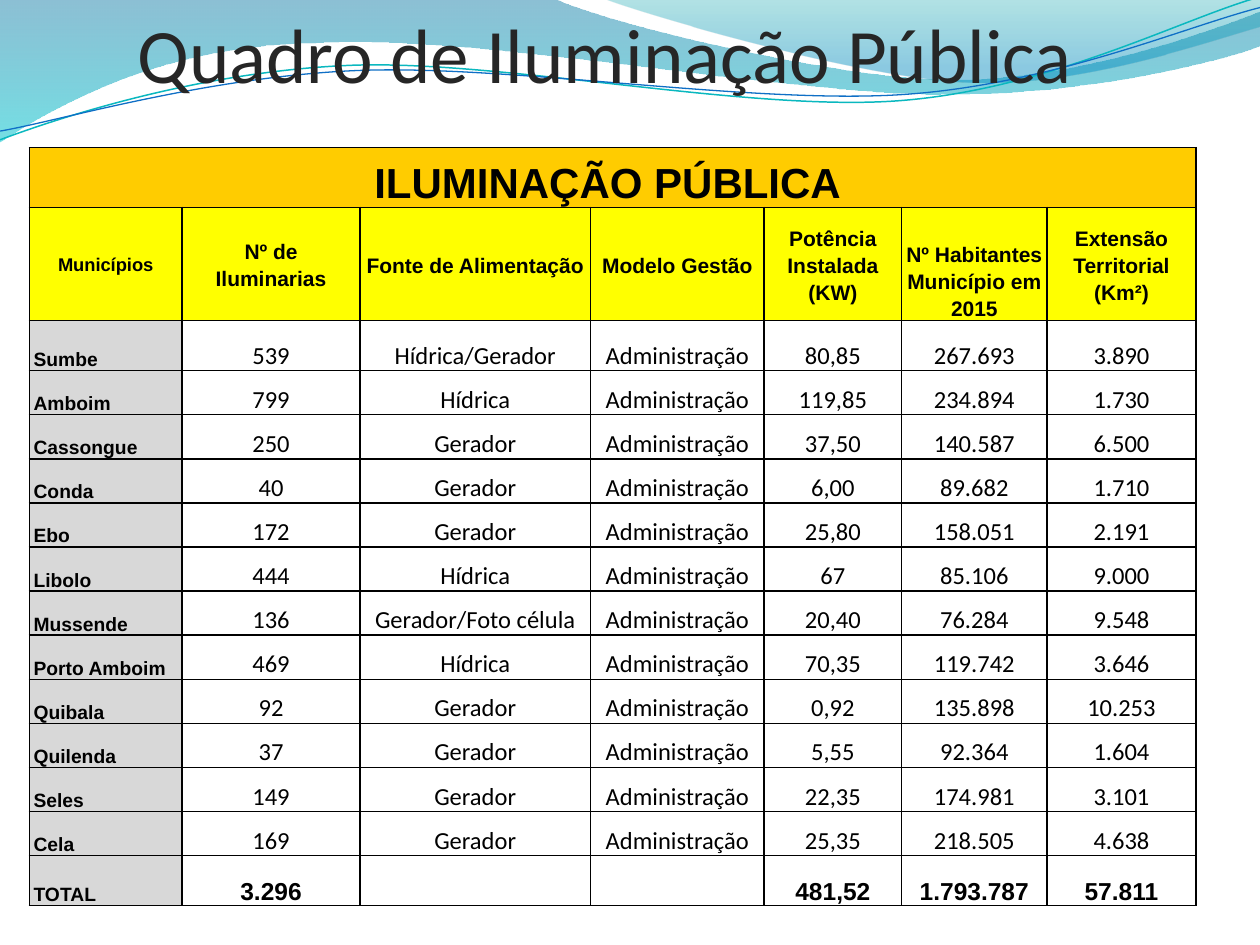
from pptx import Presentation
from pptx.dml.color import RGBColor
from pptx.enum.text import MSO_ANCHOR, MSO_AUTO_SIZE, PP_ALIGN
from pptx.oxml.ns import qn
from pptx.util import Pt
from lxml import etree

CENTER, LEFT = PP_ALIGN.CENTER, PP_ALIGN.LEFT
MIDDLE, BOTTOM = MSO_ANCHOR.MIDDLE, MSO_ANCHOR.BOTTOM

COLORS = {
    "title": "262626", "text": "000000", "border": "000000",
    "banner": "FFCC00", "header": "FFFF00", "name": "D8D8D8", "body": "FFFFFF",
    "blue": "0074A1", "cyan": "00C6CF", "teal": "00A1A9", "sky": "008BBF",
    "teal_line": "0AB8BF", "blue_line": "0F6FC6",
}

# Outlines in points: a pair is a straight step, six numbers are a Bézier curve
WIDE_WAVE = [
    (0, -0.7), (316.8, -0.7),
    (342.7, 12.2, 478.1, 45.4, 545.8, 45.4), (614.2, 45.4, 689.8, 18.7, 720, 6.5),
    (720.7, 25.9),
    (707.8, 31.7, 626.4, 54.7, 537.1, 54), (447.8, 54, 275, 20.2, 185, 24.5),
    (92.9, 25.2, 33.1, 59.8, -0.7, 81.4), (0, -0.7),
]
RIGHT_WAVE = [
    (344.9, -0.7),
    (366.5, 7.9, 491, 44.6, 553.7, 46.8), (616.3, 49.7, 691.9, 23, 720, 15.1),
    (720, 0), (344.9, -0.7),
]
TEAL_CURVE = [
    (0, 79.9),
    (34.6, 67, 113.8, 41, 199.4, 37.4), (284.4, 33.8, 427, 64.1, 513.4, 57.6),
    (599.8, 51.1, 675.4, 10.8, 718.6, -1.4),
]
BLUE_CURVE = [
    (0, 74.9),
    (33.8, 69.1, 118.1, 43.9, 203.8, 40.3), (290.2, 36.7, 429.8, 59.8, 516.2, 54),
    (601.9, 48.2, 677.5, 15.1, 720, 4.3),
]

COLUMN_WIDTHS = [87.3, 101.6, 131.8, 99.2, 78.6, 83.1, 85.1]
ROW_HEIGHTS = [34.1, 64.8, 28.5] + [25.2] * 11 + [28.6]
BANNER = "ILUMINAÇÃO PÚBLICA "
HEADERS = ["Municípios", "Nº de Iluminarias", "Fonte de Alimentação", "Modelo Gestão",
           "Potência Instalada (KW)", "Nº Habitantes Município em 2015",
           "Extensão Territorial (Km²)"]
MANAGEMENT = "Administração"
# Municipality, lamps, supply, power, inhabitants, area
MUNICIPALITIES = [
    ("Sumbe", "539", "Hídrica/Gerador", "80,85", "267.693", "3.890"),
    ("Amboim", "799", "Hídrica", "119,85", "234.894", "1.730"),
    ("Cassongue", "250", "Gerador", "37,50", "140.587", "6.500"),
    ("Conda", "40", "Gerador", "6,00", "89.682", "1.710"),
    ("Ebo", "172", "Gerador", "25,80", "158.051", "2.191"),
    ("Libolo", "444", "Hídrica", "67", "85.106", "9.000"),
    ("Mussende", "136", "Gerador/Foto célula", "20,40", "76.284", "9.548"),
    ("Porto Amboim", "469", "Hídrica", "70,35", "119.742", "3.646"),
    ("Quibala", "92", "Gerador", "0,92", "135.898", "10.253"),
    ("Quilenda", "37", "Gerador", "5,55", "92.364", "1.604"),
    ("Seles", "149", "Gerador", "22,35", "174.981", "3.101"),
    ("Cela", "169", "Gerador", "25,35", "218.505", "4.638"),
]
TOTALS = ["TOTAL", "3.296", "", "", "481,52", "1.793.787", "57.811"]


def rgb(name):
    return RGBColor.from_string(COLORS[name])


def add_outline(slide, outline, close):
    """Build the outline from its end points, then bend the curved steps."""
    points = [(Pt(step[-2]), Pt(step[-1])) for step in outline]
    builder = slide.shapes.build_freeform(*points[0])
    builder.add_line_segments(points[1:], close=close)
    shape = builder.convert_to_shape()
    shape.shadow.inherit = False
    segments = list(shape._element.spPr.iter(qn("a:lnTo")))
    for segment, step in zip(segments, outline[1:]):
        if len(step) == 6:
            segment.tag = qn("a:cubicBezTo")
            for index, (x, y) in enumerate((step[:2], step[2:4])):
                point = etree.Element(qn("a:pt"), x=str(Pt(x) - shape.left),
                                      y=str(Pt(y) - shape.top))
                segment.insert(index, point)
    return shape


def add_wave(slide, outline, stops):
    """Add a see-through wave; each stop is colour, position and opacity in percent."""
    shape = add_outline(slide, outline, True)
    shape.line.fill.background()
    shape.fill.gradient()
    shape.fill.gradient_angle = 270
    for stop, (color, position, _) in zip(shape.fill.gradient_stops, stops):
        stop.color.rgb = rgb(color)
        stop.position = position / 100
    fills = shape._element.spPr.iter(qn("a:srgbClr"))
    for element, (_, _, opacity) in zip(list(fills), stops):
        etree.SubElement(element, qn("a:alpha")).set("val", str(opacity * 1000))


def add_curve(slide, outline, color, width):
    shape = add_outline(slide, outline, False)
    shape.fill.background()
    shape.line.color.rgb = rgb(color)
    shape.line.width = Pt(width)


def add_run(paragraph, text, font, size, color, bold=False):
    run = paragraph.add_run()
    run.text = text
    run.font.name = font
    run.font.size = Pt(size)
    run.font.bold = bold
    run.font.color.rgb = rgb(color)


def add_title(slide, text):
    box = slide.shapes.add_textbox(Pt(0), Pt(0), Pt(691.9), Pt(60.5))
    frame = box.text_frame
    frame.word_wrap = True
    frame.auto_size = MSO_AUTO_SIZE.SHAPE_TO_FIT_TEXT
    frame.vertical_anchor = MIDDLE
    paragraph = frame.paragraphs[0]
    paragraph.alignment = CENTER
    add_run(paragraph, text, "Calibri", 44, "title")


def add_borders(cell):
    properties = cell._tc.get_or_add_tcPr()
    for side in ("lnL", "lnR", "lnT", "lnB"):
        line = etree.SubElement(properties, qn("a:" + side), w=str(Pt(1)))
        fill = etree.SubElement(line, qn("a:solidFill"))
        etree.SubElement(fill, qn("a:srgbClr"), val=COLORS["border"])


def fill_cell(cell, text, fill, size, font="Arial", bold=True, align=CENTER, anchor=BOTTOM):
    add_borders(cell)
    cell.fill.solid()
    cell.fill.fore_color.rgb = rgb(fill)
    cell.margin_left = cell.margin_right = Pt(2.4)
    cell.margin_top = cell.margin_bottom = Pt(0)
    cell.vertical_anchor = anchor
    if text:
        paragraph = cell.text_frame.paragraphs[0]
        paragraph.alignment = align
        paragraph.line_spacing = 1.15
        add_run(paragraph, text, font, size, "text", bold)


def add_lighting_table(slide):
    table = slide.shapes.add_table(
        len(ROW_HEIGHTS), len(COLUMN_WIDTHS), Pt(16.8), Pt(84.4),
        Pt(sum(COLUMN_WIDTHS)), Pt(sum(ROW_HEIGHTS))).table
    table.first_row = table.horz_banding = False
    for column, width in zip(table.columns, COLUMN_WIDTHS):
        column.width = Pt(width)
    for row, height in zip(table.rows, ROW_HEIGHTS):
        row.height = Pt(height)

    # Banner across all columns
    last_column = len(COLUMN_WIDTHS) - 1
    table.cell(0, 0).merge(table.cell(0, last_column))
    for column in range(last_column + 1):
        fill_cell(table.cell(0, column), "" if column else BANNER, "banner", 24)

    # Column headings
    for column, text in enumerate(HEADERS):
        fill_cell(table.cell(1, column), text, "header", 12 if column else 10.5,
                  anchor=BOTTOM if column == 5 else MIDDLE)

    # Municipalities and totals
    rows = [[*record[:3], MANAGEMENT, *record[3:]] for record in MUNICIPALITIES] + [TOTALS]
    for index, values in enumerate(rows, start=2):
        is_total = values is TOTALS
        fill_cell(table.cell(index, 0), values[0], "name", 11, align=LEFT)
        for column, text in enumerate(values[1:], start=1):
            fill_cell(table.cell(index, column), text, "body", 14,
                      "Arial" if is_total else "Calibri", is_total)


def main():
    presentation = Presentation()
    presentation.slide_width, presentation.slide_height = Pt(720), Pt(540)
    slide = presentation.slides.add_slide(presentation.slide_layouts[6])

    # Wave decoration
    add_wave(slide, WIDE_WAVE, [("blue", 0, 45), ("cyan", 100, 55)])
    add_wave(slide, RIGHT_WAVE, [("teal", 0, 30), ("sky", 80, 45)])
    add_curve(slide, TEAL_CURVE, "teal_line", 0.85)
    add_curve(slide, BLUE_CURVE, "blue_line", 0.75)

    # Content
    add_title(slide, "Quadro de Iluminação Pública")
    add_lighting_table(slide)
    presentation.save("out.pptx")


if __name__ == "__main__":
    main()
